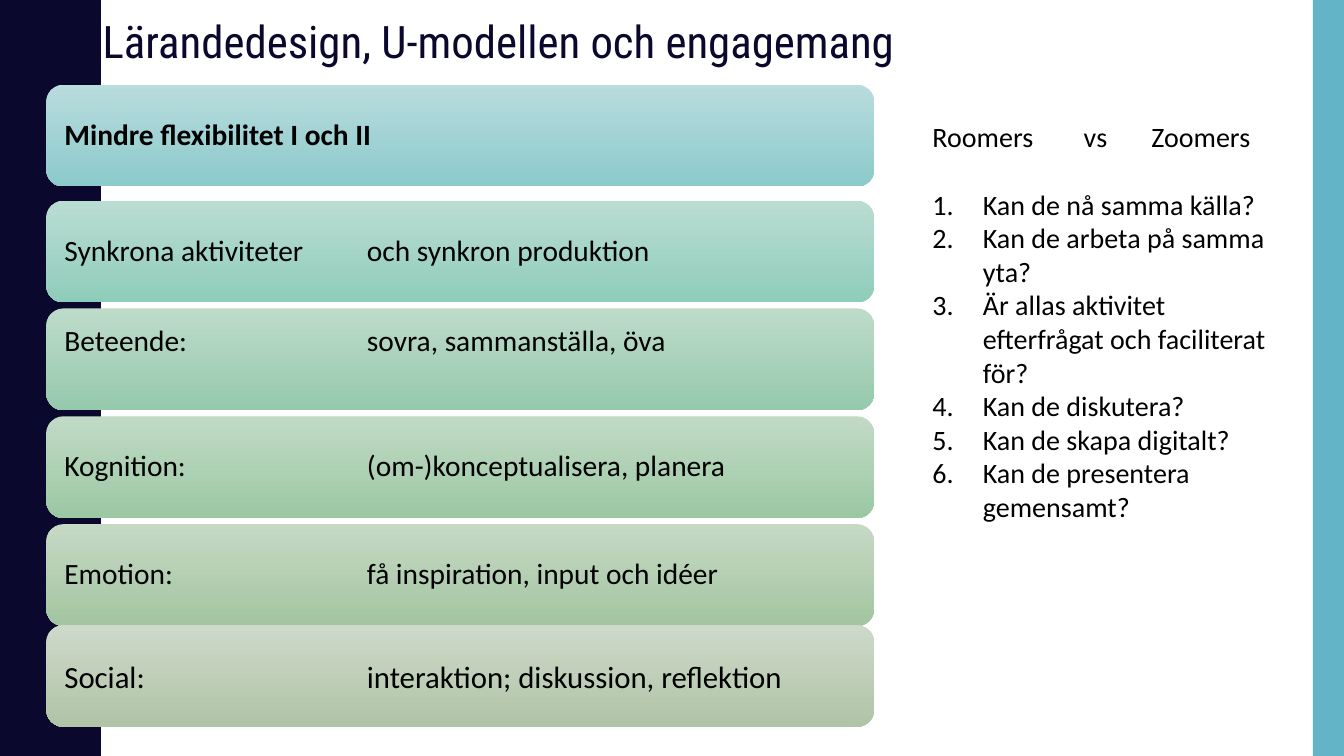
"""Build the slide on learning design, the U model and engagement."""
from lxml.etree import SubElement
from pptx import Presentation
from pptx.dml.color import RGBColor
from pptx.enum.shapes import MSO_SHAPE
from pptx.enum.text import MSO_ANCHOR, PP_ALIGN
from pptx.oxml.ns import qn
from pptx.util import Inches, Pt

WIDE, HIGH = 13.33, 7.5
NAVY, TEAL, BLACK = "0B082E", "62B4C6", "000000"


def tone(code):
    return RGBColor.from_string(code)


def write(para, text, size=20, font="Calibri", color=BLACK, bold=False,
          space=1.0, after=0, tabs=(), number=False):
    para.alignment = PP_ALIGN.LEFT
    para.line_spacing = space
    para.space_after = Pt(after)
    run = para.add_run()
    run.text = text
    run.font.size, run.font.name, run.font.bold = Pt(size), font, bold
    run.font.color.rgb = tone(color)
    props = para._p.get_or_add_pPr()
    if number:
        props.set("marL", str(Inches(0.5)))
        props.set("indent", str(-Inches(0.5)))
        SubElement(props, qn("a:buFont"), typeface="+mj-lt")
        SubElement(props, qn("a:buAutoNum"), type="arabicPeriod")
    if tabs:
        stops = SubElement(props, qn("a:tabLst"))
        for stop in tabs:
            SubElement(stops, qn("a:tab"), pos=str(Inches(stop)), algn="l")


deck = Presentation()
deck.slide_width, deck.slide_height = Inches(WIDE), Inches(HIGH)
slide = deck.slides.add_slide(deck.slide_layouts[6])
shapes = slide.shapes

rise = [(0.78, 0), (0.78, 0.07), (0.79, 0.14), (0.8, 0.2), (0.81, 0.25),
        (0.83, 0.29), (0.87, 0.38), (0.91, 0.46), (0.93, 0.5),
        (0.95, 0.55), (0.96, 0.61), (0.97, 0.68), (0.97, 0.75)]
waves = 5
step = HIGH / waves
edge = []
for wave in range(waves):
    edge += [(x, wave * step + y) for x, y in rise]
    edge += [(x, (wave + 1) * step - y) for x, y in reversed(rise)]
pen = shapes.build_freeform(0, 0, scale=Inches(1))
pen.add_line_segments(edge + [(0, HIGH)], close=True)
band = pen.convert_to_shape()
strip = shapes.add_shape(MSO_SHAPE.RECTANGLE, Inches(WIDE - 0.31), 0,
                         Inches(0.31), Inches(HIGH))
for part, color in ((band, NAVY), (strip, TEAL)):
    part.shadow.inherit = False
    part.fill.solid()
    part.fill.fore_color.rgb = tone(color)
    part.line.fill.background()

first, second, pitch, last = 0.84, 1.99, 1.07, 6.2
tops = [first] + [second + pitch * row for row in range(4)] + [last]
cards = [
    ("Mindre flexibilitet I och II", "B9DCDD", "8CCACC", 21),
    ("Synkrona aktiviteter\toch synkron produktion", "BADDD2", "8FCCBA", 21),
    ("Beteende:\tsovra, sammanställa, öva", "BEDBCA", "95C9AC", 21),
    ("Kognition:\t(om-)konceptualisera, planera", "C1DAC6", "9BC8A3", 21),
    ("Emotion:\tfå inspiration, input och idéer", "C6D9C5", "A3C5A1", 21),
    ("Social:\tinteraktion; diskussion, reflektion", "CED9C9", "B0C4A7", 22),
]
for top, (text, light, dark, size) in zip(tops, cards):
    card = shapes.add_shape(MSO_SHAPE.ROUNDED_RECTANGLE, Inches(0.46),
                            Inches(top), Inches(8.21), Inches(1.01))
    card.shadow.inherit = False
    card.line.fill.background()
    card.fill.gradient()
    card.fill.gradient_angle = 270
    for stop, color in zip(card.fill.gradient_stops, (light, dark)):
        stop.color.rgb = tone(color)
    frame = card.text_frame
    frame.word_wrap = True
    frame.vertical_anchor = MSO_ANCHOR.MIDDLE
    frame.margin_left = frame.margin_right = Inches(0.13)
    raised = text.startswith("Beteende")
    frame.margin_bottom = Inches(0.4 if raised else 0.05)
    write(frame.paragraphs[0], text, size=size, bold=top == first,
          space=1.0 if top == last else 0.9, tabs=[3])

panel = shapes.add_textbox(Inches(9.15), Inches(1.14), Inches(3.58), Inches(6.16))
frame = panel.text_frame
frame.word_wrap = True
write(frame.paragraphs[0], "Roomers\tvs\tZoomers", after=24, tabs=[1.5, 2.17])
for ask in ("Kan de nå samma källa?",
            "Kan de arbeta på samma yta?",
            "Är allas aktivitet efterfrågat och faciliterat för?",
            "Kan de diskutera?",
            "Kan de skapa digitalt?",
            "Kan de presentera gemensamt?"):
    write(frame.add_paragraph(), ask, number=True)

title = shapes.add_textbox(Inches(0.92), Inches(0.15), Inches(10.5), Inches(0.8))
title.text_frame.word_wrap = True
write(title.text_frame.paragraphs[0], "Lärandedesign, U-modellen och engagemang",
      size=32, font="Roboto Condensed", color=NAVY, space=0.89)

deck.save("out.pptx")
